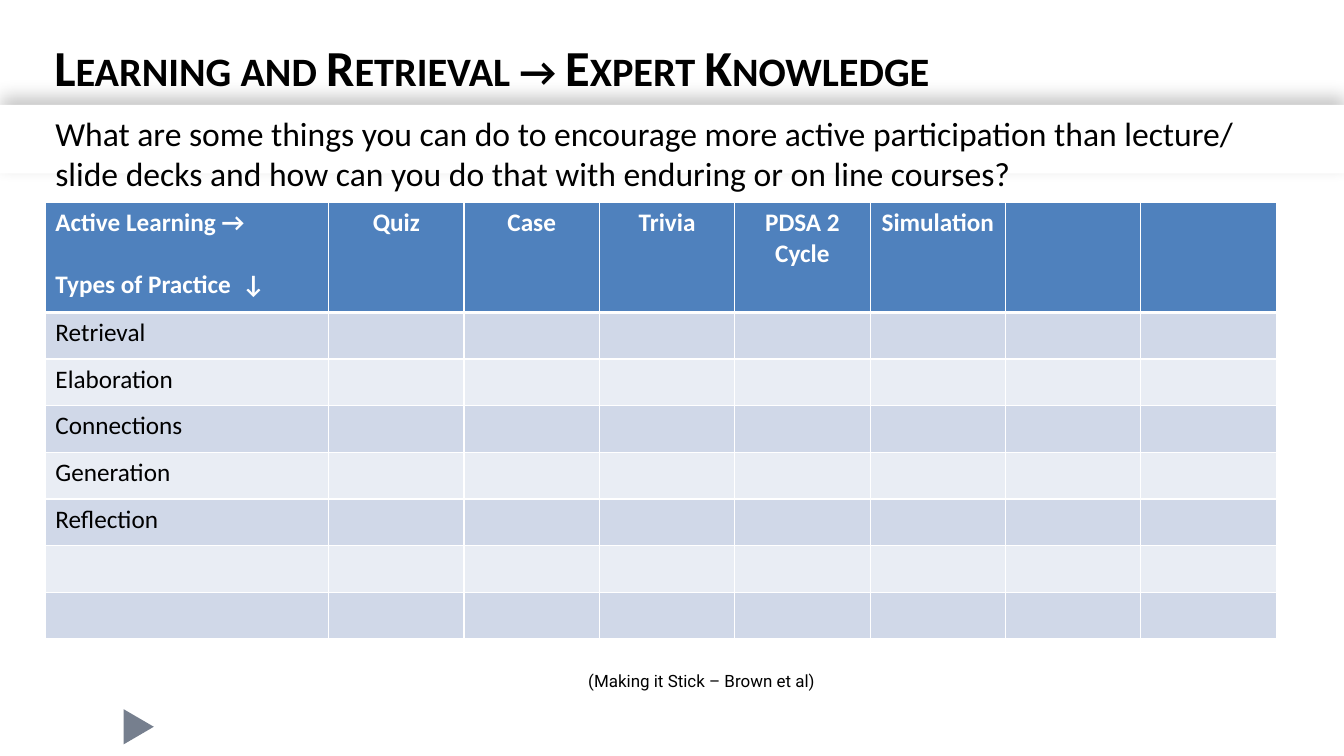
from lxml import etree
from pptx import Presentation
from pptx.dml.color import RGBColor
from pptx.enum.shapes import MSO_SHAPE
from pptx.enum.text import MSO_ANCHOR, PP_ALIGN
from pptx.oxml.ns import qn
from pptx.util import Inches, Pt

RECT = MSO_SHAPE.RECTANGLE
WEDGE = MSO_SHAPE.ISOSCELES_TRIANGLE
LEFT, MID, RIGHT = PP_ALIGN.LEFT, PP_ALIGN.CENTER, PP_ALIGN.RIGHT
TOP, CENTER, BOTTOM = MSO_ANCHOR.TOP, MSO_ANCHOR.MIDDLE, MSO_ANCHOR.BOTTOM

WHITE = RGBColor(0xFF, 0xFF, 0xFF)
BLACK = RGBColor(0, 0, 0)
BLUE = RGBColor(0x4F, 0x81, 0xBD)
BANDS = RGBColor(0xD0, 0xD8, 0xE8), RGBColor(0xE9, 0xED, 0xF4)
SLATE = RGBColor(0x42, 0x4E, 0x63)

HEADS = [
    ["Active Learning →", "Types of Practice  ↓"],
    ["Quiz"], ["Case"], ["Trivia"], ["PDSA 2 Cycle"], ["Simulation"], [], [],
]
TYPES = ["Retrieval", "Elaboration", "Connections", "Generation", "Reflection", "", ""]


def add(parent, tag, **attrs):
    return etree.SubElement(parent, qn(tag), {k: str(v) for k, v in attrs.items()})


def write(frame, lines, size=18, font="Calibri", color=BLACK, bold=False,
          align=LEFT, gap=0, caps=False):
    for i, line in enumerate(lines):
        para = frame.add_paragraph() if i else frame.paragraphs[0]
        para.alignment = align
        if i:
            para.space_before = Pt(gap)
        run = para.add_run()
        run.text = line
        run.font.size = Pt(size)
        run.font.name = font
        run.font.bold = bold
        run.font.color.rgb = color
        if caps:
            run.font._element.set("cap", "small")


def label(slide, box, text, anchor=TOP, **style):
    frame = slide.shapes.add_textbox(*map(Inches, box)).text_frame
    frame.word_wrap = True
    frame.vertical_anchor = anchor
    write(frame, [text], **style)
    return frame


def block(slide, kind, box, color):
    shape = slide.shapes.add_shape(kind, *map(Inches, box))
    shape.shadow.inherit = False
    shape.fill.solid()
    shape.fill.fore_color.rgb = color
    shape.line.fill.background()
    return shape


def band(slide, box):
    shape = block(slide, RECT, box, WHITE)
    effects = shape._element.spPr.find(qn("a:effectLst"))
    shade = add(effects, "a:outerShdw", blurRad=Pt(12), dist=Pt(6),
                dir=270 * 60000, algn="ctr", rotWithShape=0)
    add(add(shade, "a:srgbClr", val=BLACK), "a:alpha", val=21000)


def arrow(slide, box):
    shape = block(slide, WEDGE, box, SLATE)
    shape.rotation = 90
    tint = shape._element.spPr.find(qn("a:solidFill"))[0]
    add(tint, "a:alpha", val=72000)


def paint(cell, color, top, base):
    props = cell._tc.get_or_add_tcPr()
    for side, width in (("L", 1), ("R", 1), ("T", top), ("B", base)):
        line = add(props, "a:ln" + side, w=Pt(width))
        add(add(line, "a:solidFill"), "a:srgbClr", val=WHITE)
    cell.fill.solid()
    cell.fill.fore_color.rgb = color


def matrix(slide, box, first, head):
    left, top, width, height = box
    rows, cols = len(TYPES) + 1, len(HEADS)
    grid = slide.shapes.add_table(rows, cols, *map(Inches, box)).table
    for i, col in enumerate(grid.columns):
        col.width = Inches((width - first) / (cols - 1) if i else first)
    for i, row in enumerate(grid.rows):
        row.height = Inches((height - head) / (rows - 1) if i else head)
    for c, lines in enumerate(HEADS):
        cell = grid.cell(0, c)
        paint(cell, BLUE, 1, 3)
        write(cell.text_frame, lines, color=WHITE, bold=True,
              align=MID if c else LEFT, gap=22)
    for r, name in enumerate(TYPES, 1):
        for c in range(cols):
            paint(grid.cell(r, c), BANDS[(r - 1) % 2], 3 if r == 1 else 1, 1)
        if name:
            write(grid.cell(r, 0).text_frame, [name])


def main():
    deck = Presentation()
    deck.slide_width, deck.slide_height = Inches(13.33), Inches(7.5)
    slide = deck.slides.add_slide(deck.slide_layouts[6])
    band(slide, (0, 1.04, 13.33, 0.68))
    arrow(slide, (1.2, 7.06, 0.35, 0.3))
    label(slide, (0.44, 0.3, 12.43, 0.72), "Learning and Retrieval → Expert Knowledge",
          anchor=CENTER, size=36, bold=True, caps=True)
    source = label(slide, (0.65, 6.34, 7.53, 0.53), "(Making it Stick – Brown et al)",
                   anchor=BOTTOM, size=12.1, font="Roboto", align=RIGHT)
    source.margin_bottom = Inches(0.02)
    matrix(slide, (0.45, 2.01, 12.21, 4.33), 2.81, 1.09)
    label(slide, (0.45, 1.07, 11.94, 0.91),
          "What are some things you can do to encourage more active participation than "
          "lecture/ slide decks and how can you do that with enduring or on line courses?",
          size=24)
    deck.save("out.pptx")


if __name__ == "__main__":
    main()
